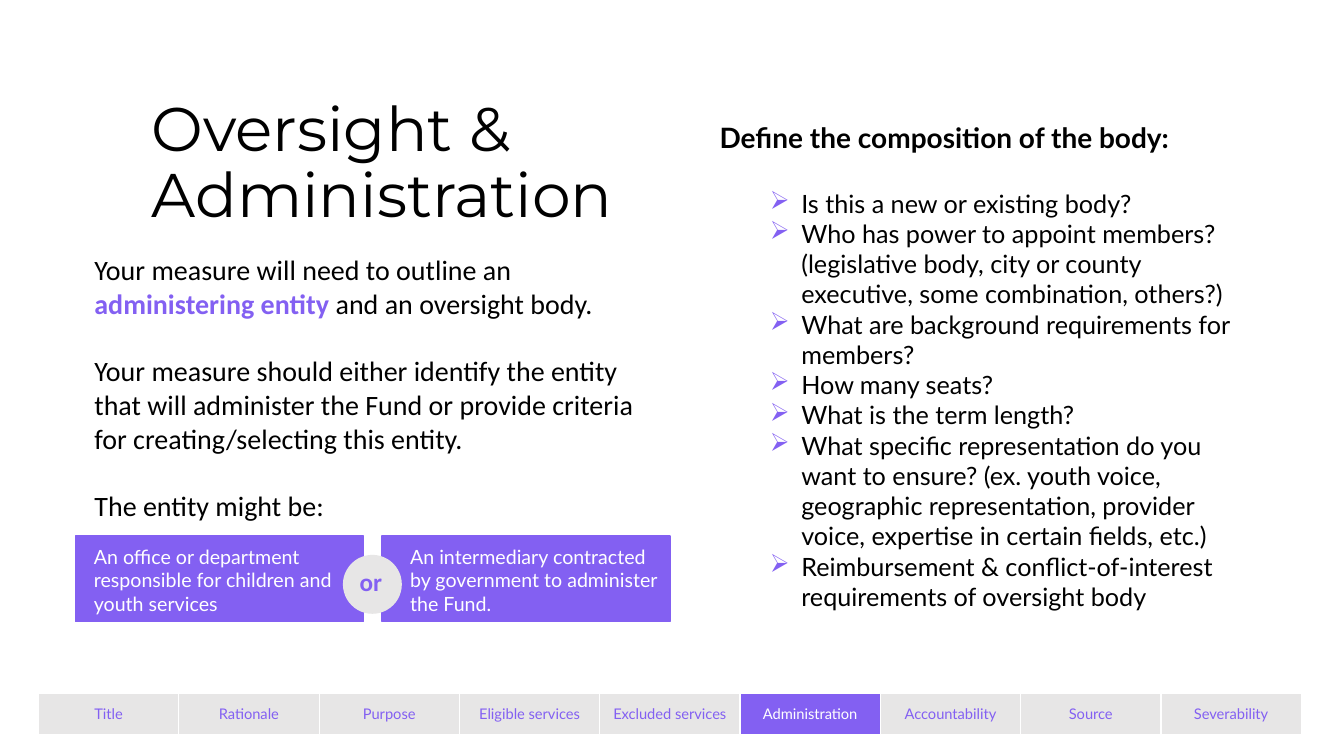
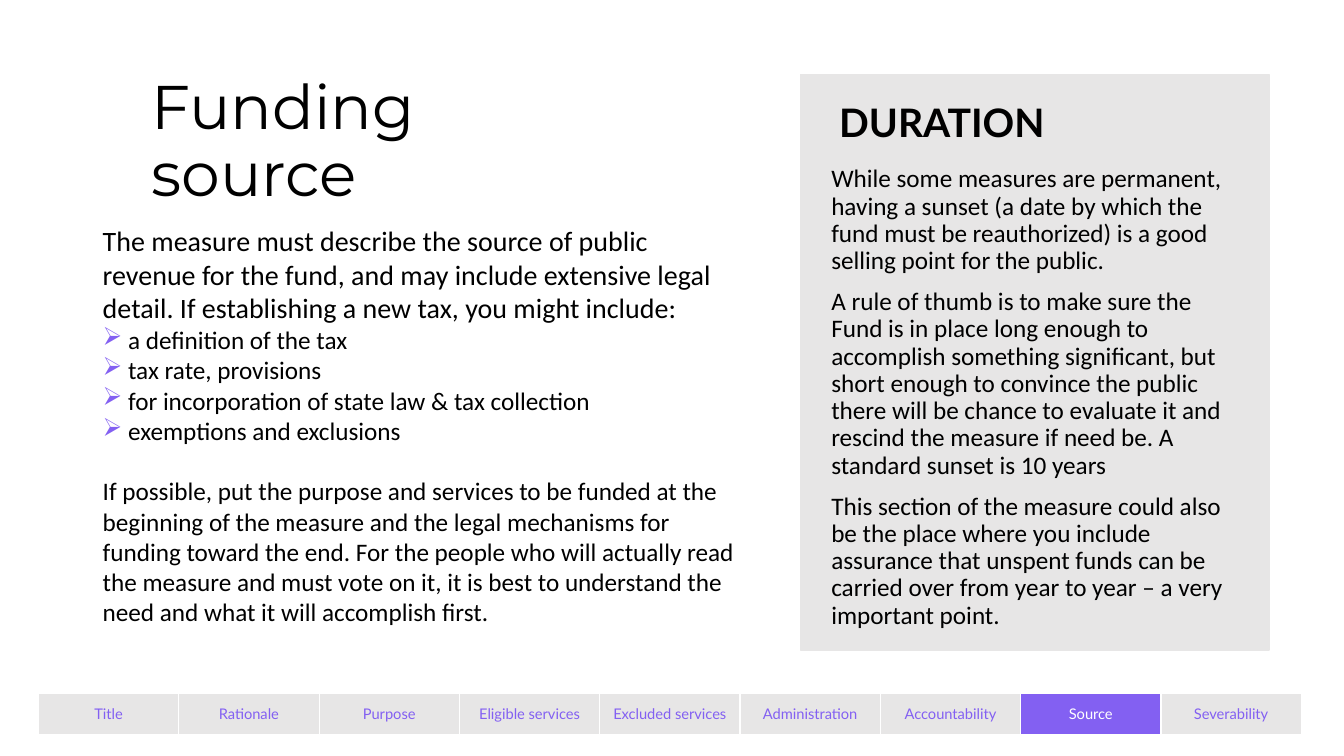
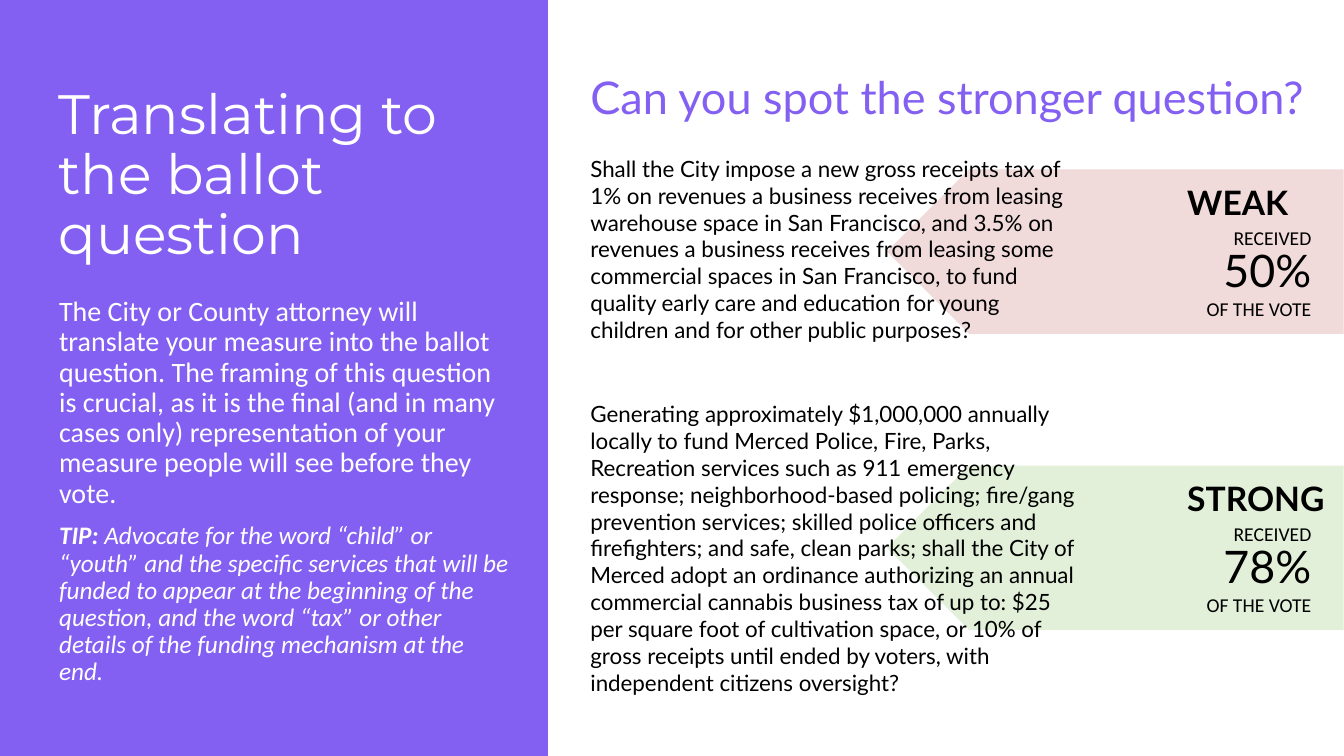
from dataclasses import dataclass
from typing import NamedTuple

from lxml.etree import SubElement
from pptx import Presentation
from pptx.dml.color import RGBColor
from pptx.enum.shapes import MSO_SHAPE as Kind
from pptx.enum.text import MSO_ANCHOR as Anchor, MSO_AUTO_SIZE as Fit, PP_ALIGN as Align
from pptx.oxml.ns import qn
from pptx.util import Cm, Pt

PURPLE = RGBColor(0x83, 0x60, 0xF2)
GRAY = RGBColor(0xE7, 0xE6, 0xE6)
BLACK = RGBColor(0, 0, 0)
WHITE = RGBColor(0xFF, 0xFF, 0xFF)
PINK = RGBColor(0xF0, 0xDA, 0xDA)
GREEN = RGBColor(0xE2, 0xF0, 0xD9)

HEAD, SANS, BODY = "Montserrat", "Lato", "Calibri"
PLAIN = "{2D5ABB26-0587-4C30-8999-92F81FD0307C}"
TABS = ("Title", "Rationale", "Purpose", "Eligible services", "Excluded services",
        "Administration", "Accountability", "Source", "Severability")


class Box(NamedTuple):
    left: float
    top: float
    width: float
    height: float

    def emu(self) -> tuple:
        return tuple(Cm(x) for x in self)


class Run(NamedTuple):
    text: str
    color: RGBColor | None = None
    bold: bool | None = None


@dataclass(frozen=True)
class Para:
    runs: str | tuple[Run, ...]
    size: float
    face: str = BODY
    color: RGBColor = BLACK
    bold: bool = False
    slant: bool = False
    before: float = 0
    lead: float = 1
    align: Align = Align.LEFT
    left: float = 0
    hang: float = 0


@dataclass(frozen=True)
class Verdict:
    top: float
    fill: RGBColor
    label: str
    share: str


def bullet(line, left: float, hang: float) -> None:
    props = line._p.get_or_add_pPr()
    props.set("marL", str(Cm(left)))
    props.set("indent", str(-Cm(hang)))
    tint = SubElement(props, qn("a:buClr"))
    SubElement(tint, qn("a:srgbClr"), val=str(PURPLE))
    SubElement(props, qn("a:buChar"), char="➢")


def write(frame, paras: list[Para]) -> None:
    for i, para in enumerate(paras):
        line = frame.add_paragraph() if i else frame.paragraphs[0]
        if para.hang:
            bullet(line, para.left, para.hang)
        line.alignment = para.align
        line.line_spacing = para.lead
        line.space_before = Pt(para.before if i else 0)
        font = line.font
        font.name, font.size, font.italic = para.face, Pt(para.size), para.slant
        runs = (Run(para.runs),) if isinstance(para.runs, str) else para.runs
        if len(runs) == 1:
            font.bold, font.color.rgb = para.bold, para.color
        for part in runs:
            run = line.add_run()
            run.text = part.text
            if len(runs) > 1:
                run.font.bold = para.bold if part.bold is None else part.bold
                run.font.color.rgb = part.color or para.color


def text(slide, box: Box, paras: list[Para], anchor: Anchor = Anchor.TOP) -> None:
    frame = slide.shapes.add_textbox(*box.emu()).text_frame
    frame.word_wrap = True
    frame.vertical_anchor = anchor
    write(frame, paras)


def head(slide, box: Box, words: str, size: float = 44, color: RGBColor = BLACK) -> None:
    title = slide.shapes.title
    slide.shapes._spTree.append(title._element)
    title.left, title.top, title.width, title.height = box.emu()
    frame = title.text_frame
    frame.word_wrap, frame.auto_size = True, Fit.NONE
    frame.vertical_anchor = Anchor.MIDDLE
    write(frame, [Para(words, size, HEAD, color, lead=0.9)])


def shape(slide, kind: Kind, box: Box, fill: RGBColor, edge: bool = True):
    item = slide.shapes.add_shape(kind, *box.emu())
    item.shadow.inherit = False
    item.fill.solid()
    item.fill.fore_color.rgb = fill
    if edge:
        item.line.color.rgb, item.line.width = fill, Pt(1)
    else:
        item.line.fill.background()
    return item


def panel(slide, box: Box, paras: list[Para]) -> None:
    table = slide.shapes.add_table(1, 1, *box.emu()).table
    table._tbl.tblPr.find(qn("a:tableStyleId")).text = PLAIN
    table.first_row = table.horz_banding = False
    cell = table.cell(0, 0)
    cell.fill.background()
    write(cell.text_frame, paras)


def nav(slide, active: str) -> None:
    box = Box(0.97, 17.48, 31.83, 1.04)
    table = slide.shapes.add_table(1, len(TABS), *box.emu()).table
    table.horz_banding = False
    for cell, name in zip(table.rows[0].cells, TABS):
        on = name == active
        cell.fill.solid()
        cell.fill.fore_color.rgb = PURPLE if on else GRAY
        cell.vertical_anchor = Anchor.MIDDLE
        write(cell.text_frame, [Para(name, 10.5, SANS, WHITE if on else PURPLE,
                                     align=Align.CENTER)])


def oversight(slide) -> None:
    head(slide, Box(3.56, 1.57, 14.63, 5.16), "Oversight & Administration")
    text(slide, Box(2.13, 6.25, 14.33, 7.44), [
        Para((Run("Your measure will need to outline an "),
              Run("administering entity ", PURPLE, True),
              Run("and an oversight body.")), 20),
        Para("Your measure should either identify the entity that will administer the Fund "
             "or provide criteria for creating/selecting this entity.", 20, before=24),
        Para("The entity might be:", 20, before=24)])
    asks = ("Is this a new or existing body?",
            "Who has power to appoint members? (legislative body, city or county executive, "
            "some combination, others?)",
            "What are background requirements for members?",
            "How many seats?",
            "What is the term length?",
            "What specific representation do you want to ensure? (ex. youth voice, geographic "
            "representation, provider voice, expertise in certain fields, etc.)",
            "Reimbursement & conflict-of-interest requirements of oversight body")
    panel(slide, Box(17.88, 2.92, 13.87, 12.62), [
        Para("Define the composition of the body:", 20, SANS, bold=True),
        *(Para(ask, 18, SANS, before=0 if i else 24, left=2.06, hang=0.79)
          for i, ask in enumerate(asks))])
    picks = ((1.9, 2.11, "An office or department responsible for children and youth services"),
             (9.63, 10.08, "An intermediary contracted by government to administer the Fund."))
    for left, inner, words in picks:
        shape(slide, Kind.RECTANGLE, Box(left, 13.51, 7.26, 2.16), PURPLE)
        panel(slide, Box(inner, 13.6, 6.81, 1.88), [Para(words, 14, SANS, WHITE)])
    shape(slide, Kind.OVAL, Box(8.66, 14, 1.45, 1.45), GRAY)
    text(slide, Box(8.62, 14.15, 1.45, 1.02),
         [Para("or", 18, color=PURPLE, bold=True, align=Align.CENTER)])
    nav(slide, "Administration")


def funding(slide) -> None:
    head(slide, Box(3.56, 0.3, 10.8, 6.6), "Funding source")
    items = ("a definition of the tax", "tax rate, provisions",
             "for incorporation of state law & tax collection", "exemptions and exclusions")
    text(slide, Box(2.34, 5.51, 16.48, 9.47), [
        Para("The measure must describe the source of public revenue for the fund, and may "
             "include extensive legal detail. If establishing a new tax, you might include:", 20),
        *(Para(item, 18, left=0.64, hang=0.64) for item in items),
        Para("If possible, put the purpose and services to be funded at the beginning of the "
             "measure and the legal mechanisms for funding toward the end. For the people who "
             "will actually read the measure and must vote on it, it is best to understand the "
             "need and what it will accomplish first.", 18, before=21.6)])
    nav(slide, "Source")
    shape(slide, Kind.RECTANGLE, Box(20.17, 1.88, 11.81, 14.5), GRAY)
    text(slide, Box(20.9, 2.36, 11.07, 1.6), [Para("DURATION", 28, SANS, bold=True)])
    notes = ("While some measures are permanent, having a sunset (a date by which the fund must "
             "be reauthorized) is a good selling point for the public.",
             "A rule of thumb is to make sure the Fund is in place long enough to accomplish "
             "something significant, but short enough to convince the public there will be "
             "chance to evaluate it and rescind the measure if need be. A standard sunset is "
             "10 years",
             "This section of the measure could also be the place where you include assurance "
             "that unspent funds can be carried over from year to year – a very important point.")
    text(slide, Box(20.7, 4.06, 10.77, 10.41),
         [Para(note, 18, before=10, lead=0.9) for note in notes])


def ballot(slide) -> None:
    votes = (Verdict(4.27, PINK, "WEAK", "50%"), Verdict(11.73, GREEN, "STRONG", "78%"))
    for vote in votes:
        top = vote.top
        arrow = shape(slide, Kind.PENTAGON, Box(22.35, top, 11.51, 4.14), vote.fill, False)
        arrow.rotation = 180
        text(slide, Box(29.67, top + 0.2, 4.19, 1.27), [Para(vote.label, 24, SANS, bold=True)])
        text(slide, Box(29.11, top + 1.3, 4.19, 2.64), [
            Para("RECEIVED", 14, align=Align.RIGHT),
            Para("OF THE VOTE", 14, before=34, align=Align.RIGHT)])
        text(slide, Box(30.15, top + 1.73, 3.15, 1.63),
             [Para(vote.share, 32, SANS, align=Align.RIGHT)])
    shape(slide, Kind.RECTANGLE, Box(-0.08, 0, 13.87, 19.05), PURPLE)
    head(slide, Box(1.22, 1.14, 10.8, 6.6), "Translating to the ballot question", 39.6, WHITE)
    text(slide, Box(1.24, 7.37, 11.89, 8.2), [
        Para("The City or County attorney will translate your measure into the ballot question. "
             "The framing of this question is crucial, as it is the final (and in many cases "
             "only) representation of your measure people will see before they vote.",
             20, color=WHITE, lead=0.9),
        Para((Run("TIP: ", bold=True),
              Run("Advocate for the word “child” or “youth” and the specific services that will "
                  "be funded to appear at the beginning of the question, and the word “tax” or "
                  "other details of the funding mechanism at the end.")),
             18, color=WHITE, slant=True, before=10, lead=0.9)])
    text(slide, Box(14.63, 0.81, 19.2, 3.43),
         [Para("Can you spot the stronger question?", 32.2, SANS, PURPLE, lead=0.9)],
         Anchor.MIDDLE)
    text(slide, Box(14.63, 3.78, 12.6, 5.74), [Para(
        "Shall the City impose a new gross receipts tax of 1% on revenues a business receives "
        "from leasing warehouse space in San Francisco, and 3.5% on revenues a business receives "
        "from leasing some commercial spaces in San Francisco, to fund quality early care and "
        "education for young children and for other public purposes?", 16, SANS)])
    text(slide, Box(14.63, 9.96, 12.95, 9), [Para(
        "Generating approximately $1,000,000 annually locally to fund Merced Police, Fire, Parks, "
        "Recreation services such as 911 emergency response; neighborhood-based policing; "
        "fire/gang prevention services; skilled police officers and firefighters; and safe, clean "
        "parks; shall the City of Merced adopt an ordinance authorizing an annual commercial "
        "cannabis business tax of up to: $25 per square foot of cultivation space, or 10% of "
        "gross receipts until ended by voters, with independent citizens oversight?", 16, SANS)])


def main() -> None:
    deck = Presentation()
    deck.slide_width, deck.slide_height = Cm(33.87), Cm(19.05)
    for build in (oversight, funding, ballot):
        build(deck.slides.add_slide(deck.slide_layouts[5]))
    deck.save("out.pptx")


if __name__ == "__main__":
    main()
